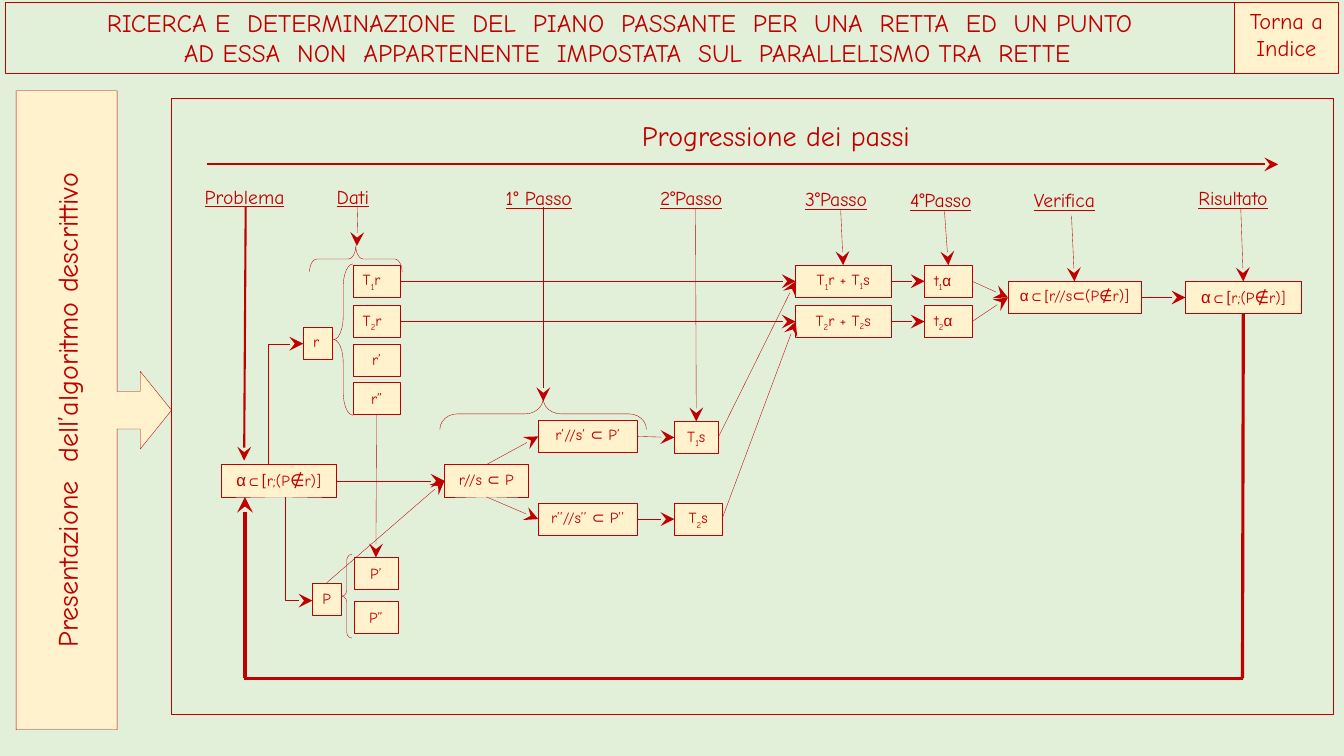
from dataclasses import dataclass
from typing import Optional

from lxml.etree import SubElement
from pptx import Presentation
from pptx.dml.color import RGBColor
from pptx.enum.shapes import MSO_CONNECTOR as Route, MSO_SHAPE as Preset
from pptx.enum.text import MSO_ANCHOR as Anchor, PP_ALIGN as Align
from pptx.oxml.ns import qn
from pptx.shapes.autoshape import Shape
from pptx.shapes.connector import Connector
from pptx.text.text import TextFrame
from pptx.util import Pt

RED, CREAM, GREEN = "C00000", "FFF2CC", "E2F0D9"
FONT = "Comic Neue"
TOP, LEFT, BOTTOM, RIGHT = range(4)
NODE_HEIGHT = 23
THIN, MEDIUM, THICK = 0.25, 1.5, 2.25


@dataclass(frozen=True)
class Fragment:
    text: str
    font: Optional[str] = None
    size: Optional[float] = None
    drop: int = 0


Line = tuple[Fragment, ...]


@dataclass(frozen=True)
class Node:
    key: str
    x: float
    y: float
    width: float
    line: Line
    align: Align = Align.CENTER
    anchor: Anchor = Anchor.MIDDLE


@dataclass(frozen=True)
class Step:
    text: str
    x: float
    y: float
    width: float
    start: tuple[float, float]
    end: tuple[float, float] = (0, 0)
    target: Optional[str] = None
    weight: float = THIN


@dataclass(frozen=True)
class Brace:
    preset: Preset
    box: tuple[float, float, float, float]
    curl: float
    rotation: float = 0


def color(value: str) -> RGBColor:
    return RGBColor.from_string(value)


def plain(text: str) -> Line:
    return (Fragment(text),)


def indexed(letter: str, index: str, rest: str) -> Line:
    return Fragment(letter), Fragment(index, drop=30), Fragment(rest)


def total(index: str) -> Line:
    return (*indexed("T", index, "r + T"), Fragment(index, drop=25), Fragment("s"))


def trace(index: str) -> Line:
    return Fragment("t"), Fragment(index, drop=25), Fragment("α", "Arial")


def write(frame: TextFrame, lines: list[Line], size: float, align: Align = Align.CENTER,
          anchor: Anchor = Anchor.TOP, underline: bool = False) -> None:
    frame.word_wrap = True
    frame.vertical_anchor = anchor
    for number, line in enumerate(lines):
        paragraph = frame.add_paragraph() if number else frame.paragraphs[0]
        paragraph.alignment = align
        paragraph.font.name = FONT
        paragraph.font.size = Pt(size)
        paragraph.font.color.rgb = color(RED)
        if underline:
            paragraph.font.underline = True
        for fragment in line:
            run = paragraph.add_run()
            run.text = fragment.text
            if fragment.font:
                run.font.name = fragment.font
            if fragment.size:
                run.font.size = Pt(fragment.size)
            if fragment.drop:
                run._r.get_or_add_rPr().set("baseline", str(-1000 * fragment.drop))


def draw_shape(preset: Preset, x: float, y: float, width: float, height: float,
               fill: Optional[str] = None) -> Shape:
    shape = shapes.add_shape(preset, Pt(x), Pt(y), Pt(width), Pt(height))
    shape.shadow.inherit = False
    if fill:
        shape.fill.solid()
        shape.fill.fore_color.rgb = color(fill)
    else:
        shape.fill.background()
    shape.line.color.rgb = color(RED)
    shape.line.width = Pt(THIN)
    return shape


def draw_line(start: tuple[float, float], end: tuple[float, float], weight: float = THIN,
              head: bool = True, route: Route = Route.STRAIGHT) -> Connector:
    connector = shapes.add_connector(route, *map(Pt, start + end))
    connector.line.color.rgb = color(RED)
    connector.line.width = Pt(weight)
    if head:
        SubElement(connector.line._get_or_add_ln(), qn("a:tailEnd"),
                   type="stealth", w="lg", len="lg")
    SubElement(connector._element.spPr, qn("a:effectLst"))
    return connector


def draw_elbow(start: tuple[float, float], end: tuple[float, float]) -> None:
    (x1, y1), (x2, y2) = start, end
    cx, cy, dx, dy = (x1 + x2) / 2, (y1 + y2) / 2, (x2 - x1) / 2, (y2 - y1) / 2
    elbow = draw_line((cx + dy, cy - dx), (cx - dy, cy + dx), route=Route.ELBOW)
    properties = elbow._element.spPr
    properties.find(qn("a:xfrm")).set("rot", "16200000")
    geometry = properties.find(qn("a:prstGeom"))
    guides = geometry.find(qn("a:avLst"))
    if guides is None:
        guides = SubElement(geometry, qn("a:avLst"))
    SubElement(guides, qn("a:gd"), name="adj1", fmla="val 100000")


GOAL = (Fragment("α", "Arial", 12), Fragment("⊂", "Arial"), Fragment("[", "Calibri", 12),
        Fragment("r;(P"), Fragment("∉", "Calibri", 12), Fragment("r)]"))
CHECK = (Fragment("α⊂", "Arial"), Fragment("[", "Calibri"), Fragment("r//s⊂(P"),
         Fragment("∉", "Calibri"), Fragment("r)]"))
ROW_1, ROW_2 = 189.4, 218.2

NODES = [
    Node("problem", 157.7, 331.9, 82.8, GOAL, anchor=Anchor.TOP),
    Node("r", 216.6, 233.5, 20.5, plain("r"), Align.LEFT, Anchor.TOP),
    Node("T1r", 252, ROW_1, 34, indexed("T", "1", "r"), Align.LEFT),
    Node("T2r", 252, ROW_2, 34, indexed("T", "2", "r"), Align.LEFT),
    Node("r'", 252, 245.5, 34, plain("r’")),
    Node("r''", 252, 273, 34, plain("r”")),
    Node("P'", 252.9, 398.2, 31.3, plain("P’")),
    Node("P''", 252.9, 429.3, 31.3, plain("P”")),
    Node("P", 223.2, 416.2, 20.5, plain("P"), Align.LEFT),
    Node("s", 317.5, 331.9, 59.8, plain("r//s ⊂ P"), anchor=Anchor.TOP),
    Node("s'", 384.5, 300.2, 70.6, plain("r’//s’ ⊂ P’"), anchor=Anchor.TOP),
    Node("s''", 384.5, 359.3, 70.6, plain("r’’//s’’ ⊂ P’’"), anchor=Anchor.TOP),
    Node("T1s", 481.7, 301, 31.3, indexed("T", "1", "s")),
    Node("T2s", 481.7, 359.3, 34, indexed("T", "2", "s")),
    Node("sum1", 568.3, ROW_1, 68, total("1")),
    Node("sum2", 568.3, ROW_2, 68, total("2")),
    Node("t1", 660.4, ROW_1, 34, trace("1"), Align.LEFT),
    Node("t2", 660.4, ROW_2, 34, trace("2"), Align.LEFT),
    Node("check", 720, 201, 95, CHECK, anchor=Anchor.TOP),
    Node("result", 846.7, 201, 82.8, GOAL, anchor=Anchor.TOP),
]
LINKS = [
    ("problem", RIGHT, "s", LEFT), ("P", TOP, "s", LEFT), ("r''", BOTTOM, "P'", TOP),
    ("s", TOP, "s'", LEFT), ("s", BOTTOM, "s''", LEFT),
    ("s'", RIGHT, "T1s", LEFT), ("s''", RIGHT, "T2s", LEFT),
    ("T1r", RIGHT, "sum1", LEFT), ("T2r", RIGHT, "sum2", LEFT),
    ("T1s", RIGHT, "sum1", LEFT), ("T2s", RIGHT, "sum2", LEFT),
    ("sum1", RIGHT, "t1", LEFT), ("sum2", RIGHT, "t2", LEFT),
    ("t1", RIGHT, "check", LEFT), ("t2", RIGHT, "check", LEFT),
    ("check", RIGHT, "result", LEFT),
]
STEPS = [
    Step("Problema", 139, 128.2, 73.4, (175.5, 147.6), (174.4, 329), weight=MEDIUM),
    Step("Dati", 233.3, 128.2, 42.5, (255.6, 147.6), (254.9, 175.7)),
    Step("1° Passo", 354.2, 129.6, 67.7, (388.1, 147.6), (388.1, 286.6)),
    Step("2°Passo", 464.4, 129.6, 65.5, (496.8, 149), target="T1s"),
    Step("3°Passo", 568.1, 130.3, 65.5, (600.5, 149.8), target="sum1"),
    Step("4°Passo", 643, 131, 65.5, (674.6, 150.5), target="t1"),
    Step("Verifica", 731.5, 131, 67.7, (765.4, 154.1), target="check"),
    Step("Risultato", 848.9, 129.6, 76.3, (886.3, 149), target="result"),
]
BRACES = [
    Brace(Preset.LEFT_BRACE, (244.1, 396, 7.2, 59.8), 0.577),
    Brace(Preset.LEFT_BRACE, (238.3, 188.6, 13.7, 108), 1.213),
    Brace(Preset.RIGHT_BRACE, (244.8, 151.9, 18.7, 66.2), 0.289, 270),
    Brace(Preset.RIGHT_BRACE, (376.8, 221.8, 22.3, 147.6), 0.566, 270),
]

deck = Presentation()
deck.slide_width, deck.slide_height = Pt(960), Pt(540)
slide = deck.slides.add_slide(deck.slide_layouts[6])
slide.background.fill.solid()
slide.background.fill.fore_color.rgb = color(GREEN)
shapes = slide.shapes

title = draw_shape(Preset.RECTANGLE, 3.6, 1.4, 878, 51).text_frame
write(title, [
    plain("RICERCA E  DETERMINAZIONE  DEL  PIANO  PASSANTE  PER  UNA  RETTA  ED  UN PUNTO"),
    plain("AD ESSA  NON  APPARTENENTE  IMPOSTATA  SUL  PARALLELISMO TRA  RETTE"),
], 18)
title.paragraphs[1]._p.get_or_add_pPr().set("marL", str(Pt(11)))
index = draw_shape(Preset.RECTANGLE, 881.8, 1.4, 74.2, 50.6, CREAM)
write(index.text_frame, [plain("Torna a Indice")], 16)

presentation_callout = draw_shape(Preset.DOWN_ARROW_CALLOUT, -161.2, 237.5, 456.5, 111, CREAM)
presentation_callout.rotation = 270
for position, value in enumerate((0.241, 0.25, 0.201, 0.65)):
    presentation_callout.adjustments[position] = value
write(presentation_callout.text_frame, [plain("Presentazione  dell’algoritmo descrittivo")],
      20, anchor=Anchor.MIDDLE)

draw_shape(Preset.RECTANGLE, 122.4, 70.4, 830.2, 440)
heading = shapes.add_textbox(Pt(141.8), Pt(80.6), Pt(825), Pt(31.7))
write(heading.text_frame, [plain("Progressione dei passi")], 20, anchor=Anchor.MIDDLE)
draw_line((147.6, 117.4), (913, 117.4), MEDIUM)

for brace in BRACES:
    outline = draw_shape(brace.preset, *brace.box)
    outline.adjustments[0] = brace.curl
    outline.rotation = brace.rotation

boxes: dict[str, Shape] = {}
for node in NODES:
    boxes[node.key] = draw_shape(Preset.RECTANGLE, node.x, node.y, node.width, NODE_HEIGHT, CREAM)
    write(boxes[node.key].text_frame, [node.line], 11, node.align, node.anchor)

for source, source_side, target, target_side in LINKS:
    link = draw_line((0, 0), (0, 0))
    link.begin_connect(boxes[source], source_side)
    link.end_connect(boxes[target], target_side)

for step in STEPS:
    label = shapes.add_textbox(Pt(step.x), Pt(step.y), Pt(step.width), Pt(24.2))
    write(label.text_frame, [plain(step.text)], 14, Align.LEFT, underline=True)
    pointer = draw_line(step.start, step.end, step.weight)
    if step.target:
        pointer.end_connect(boxes[step.target], TOP)

draw_elbow((203.8, 355), (223.2, 429))
draw_elbow((191.5, 331.9), (216.6, 245.5))

draw_line((174.5, 484.6), (888.2, 484.6), THICK, head=False)
feedback = draw_line((887.5, 224), (887.5, 484.6), THICK, head=False)
feedback.begin_connect(boxes["result"], BOTTOM)
draw_line((175, 484.6), (175, 355), THICK)

deck.save("out.pptx")
